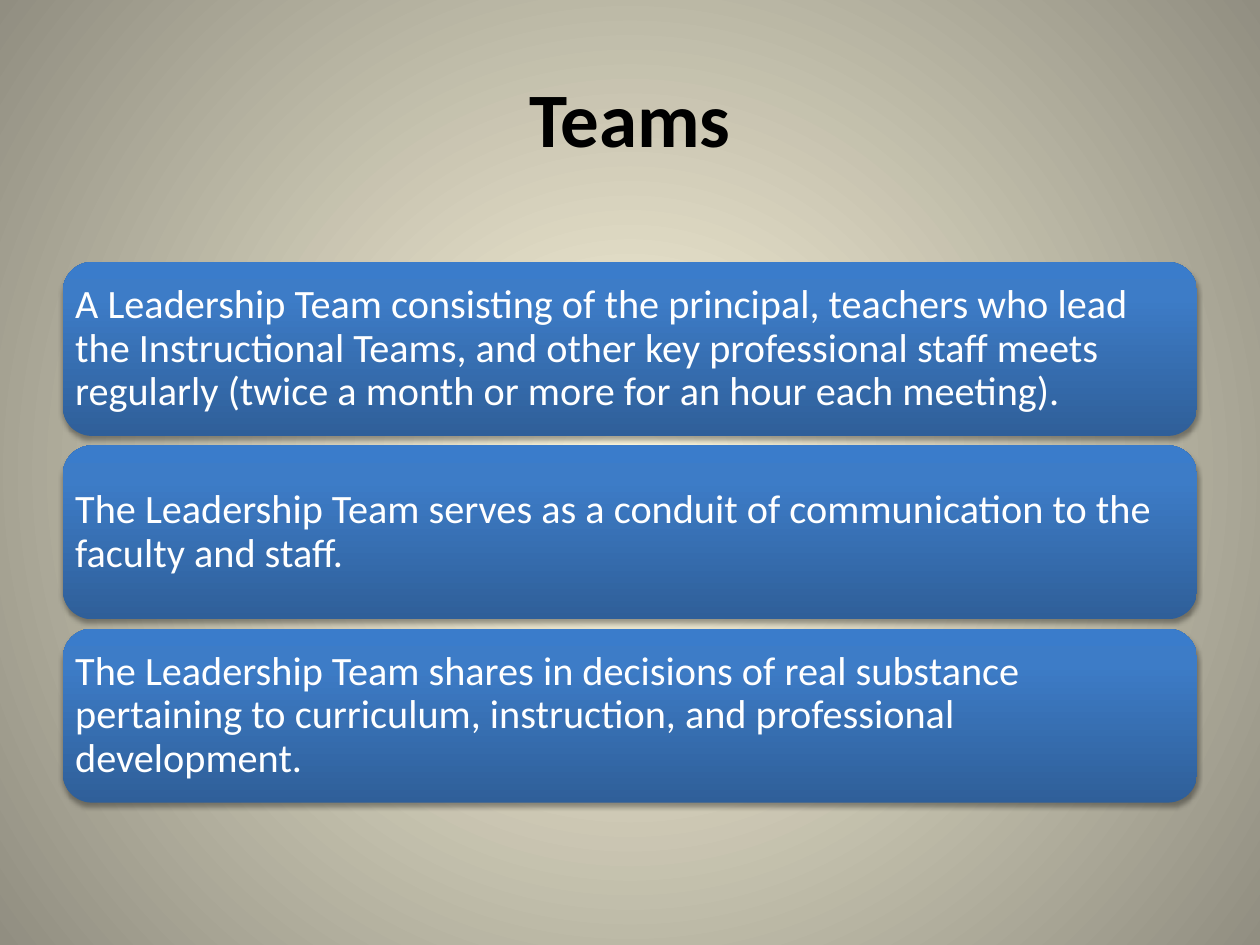
"""Build the Teams slide: a title above three stacked statement panels."""
from lxml import etree
from pptx import Presentation
from pptx.dml.color import RGBColor
from pptx.enum.shapes import MSO_SHAPE
from pptx.enum.text import MSO_ANCHOR, PP_ALIGN
from pptx.oxml import parse_xml
from pptx.util import Inches, Pt

ROUNDED = MSO_SHAPE.ROUNDED_RECTANGLE
MIDDLE = MSO_ANCHOR.MIDDLE
LEFT, CENTER = PP_ALIGN.LEFT, PP_ALIGN.CENTER
DRAWING_NS = "http://schemas.openxmlformats.org/drawingml/2006/main"

TITLE = "Teams"
STATEMENTS = [
    "A Leadership Team consisting of the principal, teachers who lead the "
    "Instructional Teams, and other key professional staff meets regularly "
    "(twice a month or more for an hour each meeting).",
    "The Leadership Team serves as a conduit of communication to the faculty and staff.",
    "The Leadership Team shares in decisions of real substance pertaining to "
    "curriculum, instruction, and professional development.",
]

THEME = {
    "title": {"name": "Calibri", "size": Pt(44), "bold": True, "color": "000000"},
    "statement": {"name": "Calibri", "size": Pt(23), "bold": False, "color": "FFFFFF"},
    "backdrop": [(0, "FCF7DD"), (100, "918E81")],
    "panel": [(0, "2F5F99"), (80, "3D7CC7"), (100, "3A7CCB")],
    "shadow": "000000",
}
RADIAL = '<a:path path="circle"><a:fillToRect l="50000" t="50000" r="50000" b="50000"/></a:path>'
UPWARD = '<a:lin ang="16200000" scaled="0"/>'

MARGIN, CONTENT_WIDTH = 0.5, 9
PANEL_TOP, PANEL_HEIGHT, PANEL_PITCH = 2.08, 1.38, 1.455
PANEL_INSET = 0.03


def set_gradient(fill, owner, stops, direction):
    """Fill the owner with a gradient of the given stops and direction."""
    fill.solid()
    solid = owner.xpath(".//p:bgPr/a:solidFill | ./p:spPr/a:solidFill")[0]
    stop_xml = "".join(
        f'<a:gs pos="{percent * 1000}"><a:srgbClr val="{color}"/></a:gs>'
        for percent, color in stops
    )
    gradient = parse_xml(
        f'<a:gradFill xmlns:a="{DRAWING_NS}" rotWithShape="1">'
        f"<a:gsLst>{stop_xml}</a:gsLst>{direction}</a:gradFill>"
    )
    solid.getparent().replace(solid, gradient)


def add_shadow(panel):
    """Give the panel a soft shadow that falls straight down."""
    panel.shadow.inherit = False
    effects = panel.element.spPr.find(f"{{{DRAWING_NS}}}effectLst")
    shadow = etree.SubElement(
        effects, f"{{{DRAWING_NS}}}outerShdw",
        blurRad=str(Pt(3.1)), dist=str(Pt(1.8)), dir="5400000", rotWithShape="0",
    )
    color = etree.SubElement(shadow, f"{{{DRAWING_NS}}}srgbClr", val=THEME["shadow"])
    etree.SubElement(color, f"{{{DRAWING_NS}}}alpha", val="35000")


def write_text(shape, wording, style, alignment):
    """Write one middle-anchored paragraph in a theme style."""
    frame = shape.text_frame
    frame.text = wording
    frame.word_wrap = True
    frame.vertical_anchor = MIDDLE
    paragraph = frame.paragraphs[0]
    paragraph.alignment = alignment
    font = paragraph.runs[0].font
    for attribute, value in THEME[style].items():
        if attribute == "color":
            font.color.rgb = RGBColor.from_string(value)
        else:
            setattr(font, attribute, value)
    return frame


def add_panel(slide, index, statement):
    """Add one statement panel at its place in the stack."""
    top = PANEL_TOP + index * PANEL_PITCH
    panel = slide.shapes.add_shape(
        ROUNDED, Inches(MARGIN), Inches(top), Inches(CONTENT_WIDTH), Inches(PANEL_HEIGHT)
    )
    set_gradient(panel.fill, panel.element, THEME["panel"], UPWARD)
    panel.line.fill.background()
    add_shadow(panel)
    frame = write_text(panel, statement, "statement", LEFT)
    frame.paragraphs[0].line_spacing = 0.9
    for side in ("left", "top", "right", "bottom"):
        setattr(frame, f"margin_{side}", Inches(PANEL_INSET))


def main():
    """Build and save the slide."""
    deck = Presentation()
    deck.slide_width, deck.slide_height = Inches(10), Inches(7.5)
    slide = deck.slides.add_slide(deck.slide_layouts[5])
    set_gradient(slide.background.fill, slide.element, THEME["backdrop"], RADIAL)

    title = slide.shapes.title
    title.left, title.top = Inches(MARGIN), Inches(0.3)
    title.width, title.height = Inches(CONTENT_WIDTH), Inches(1.25)
    write_text(title, TITLE, "title", CENTER)

    for index, statement in enumerate(STATEMENTS):
        add_panel(slide, index, statement)
    deck.save("out.pptx")


if __name__ == "__main__":
    main()
